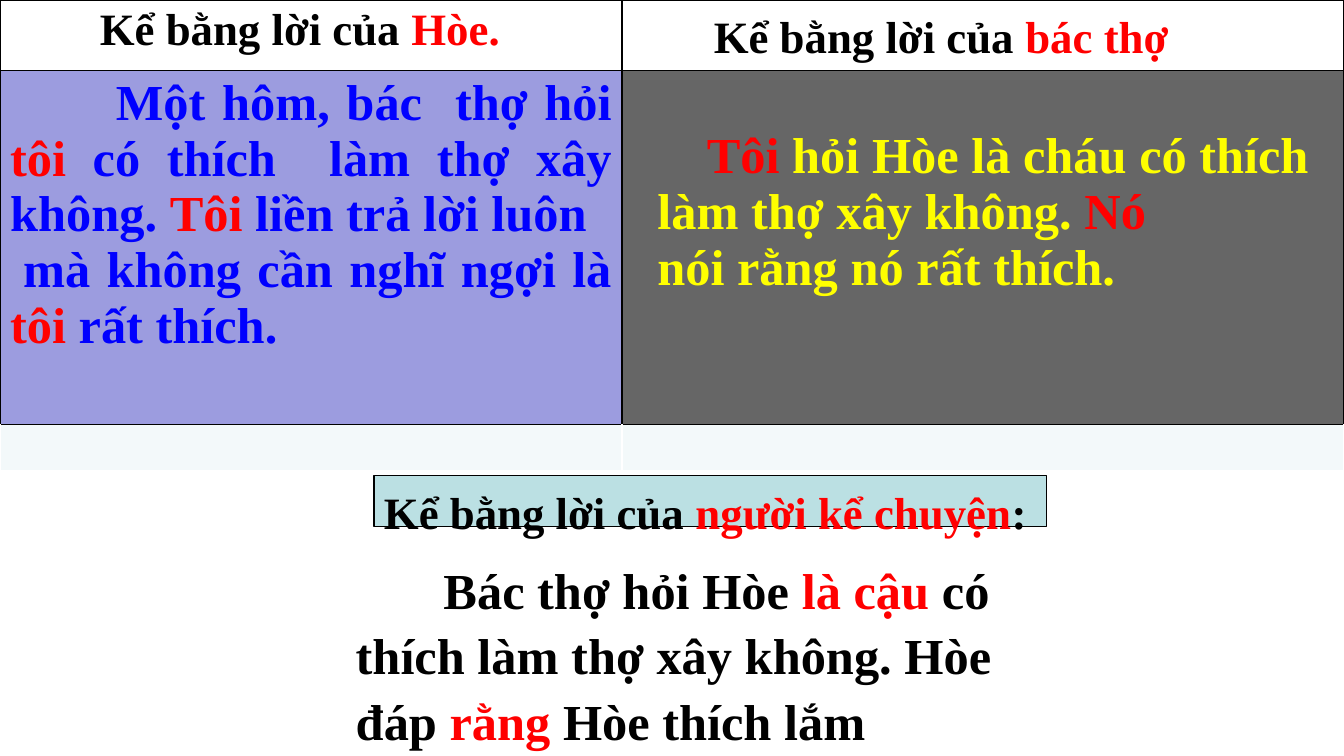
from lxml.etree import SubElement
from pptx import Presentation
from pptx.dml.color import RGBColor
from pptx.enum.shapes import MSO_SHAPE
from pptx.enum.text import MSO_ANCHOR, PP_ALIGN
from pptx.oxml.ns import qn
from pptx.util import Inches, Pt

COLORS = {
    "black": "000000", "white": "FFFFFF", "red": "FF0000", "blue": "0000FF",
    "yellow": "FFFF00", "lavender": "9C9CDF", "gray": "666666",
    "pale": "F3F9FA", "teal": "BBE0E3",
}
FONT = "Times New Roman"
HEADING_SIZE, BODY_SIZE = 32, 36
JUSTIFY, LEFT = PP_ALIGN.JUSTIFY, PP_ALIGN.LEFT

COLUMN_WIDTHS = [6.17, 7.16]
ROW_HEIGHTS = [0.7, 3.51, 0.46]

HOE_HEADING = [(0.89, [("Kể bằng lời của ", "black"), ("Hòe.", "red")])]
WORKER_HEADING = [(0.81, [("Kể bằng lời của ", "black"), ("bác thợ", "red")])]
HOE_STORY = [
    (1.05, [("Một hôm, bác  thợ hỏi ", "blue"), ("tôi ", "red"),
            ("có thích  làm thợ xây không. ", "blue"), ("Tôi ", "red"),
            ("liền trả lời luôn", "blue")]),
    (0.13, [("mà không cần nghĩ ngợi là ", "blue"), ("tôi ", "red"),
            ("rất thích.", "blue")]),
]
WORKER_STORY = [
    (0.49, [("Tôi ", "red"), ("hỏi Hòe là cháu có thích", "yellow")]),
    (0, [("làm thợ xây không. ", "yellow"), ("Nó", "red")]),
    (0, [("nói rằng nó rất thích.", "yellow")]),
]
NARRATOR_HEADING = [(0, [("Kể bằng lời của ", "black"),
                         ("người kể chuyện", "red"), (":", "black")])]
NARRATOR_STORY = [
    (0.87, [("Bác thợ hỏi Hòe ", "black"), ("là cậu ", "red"),
            ("có thích làm thợ xây không. Hòe đáp ", "black"),
            ("rằng ", "red"), ("Hòe thích lắm", "black")]),
]

CELLS = [
    [("white", HOE_HEADING, HEADING_SIZE, JUSTIFY, 0.1, 0.05),
     ("white", WORKER_HEADING, HEADING_SIZE, LEFT, 0.1, 0.13)],
    [("lavender", HOE_STORY, BODY_SIZE, JUSTIFY, 0.1, 0.05),
     ("gray", WORKER_STORY, BODY_SIZE, JUSTIFY, 0.35, 0.58)],
    [("pale", [], BODY_SIZE, LEFT, 0.1, 0.05)] * 2,
]


def color(name):
    return RGBColor.from_string(COLORS[name])


def write(frame, paragraphs, size, align, spacing=None):
    frame.word_wrap = True
    for index, (indent, runs) in enumerate(paragraphs):
        paragraph = frame.paragraphs[0] if index == 0 else frame.add_paragraph()
        paragraph.alignment = align
        paragraph.line_spacing = spacing
        paragraph.font.size = Pt(size)
        paragraph.font.name = FONT
        paragraph.font.bold = True
        properties = paragraph._p.get_or_add_pPr()
        properties.set("marL", "0")
        properties.set("indent", str(Inches(indent)))
        for text, name in runs:
            run = paragraph.add_run()
            run.text = text
            run.font.color.rgb = color(name)


def set_borders(cell, sides):
    properties = cell._tc.get_or_add_tcPr()
    for index, (side, name) in enumerate(sides.items()):
        line = SubElement(properties, qn(f"a:ln{side}"), w=str(Pt(1)))
        fill = SubElement(line, qn("a:solidFill"))
        SubElement(fill, qn("a:srgbClr"), val=COLORS[name])
        properties.remove(line)
        properties.insert(index, line)


def add_story_table(slide):
    table = slide.shapes.add_table(
        len(ROW_HEIGHTS), len(COLUMN_WIDTHS), 0, 0,
        Inches(sum(COLUMN_WIDTHS)), Inches(sum(ROW_HEIGHTS))).table
    table.first_row = table.horz_banding = False
    for column, width in zip(table.columns, COLUMN_WIDTHS):
        column.width = Inches(width)
    for row, height in zip(table.rows, ROW_HEIGHTS):
        row.height = Inches(height)
    for row_index, row in enumerate(CELLS):
        border = "white" if row_index == len(CELLS) - 1 else "black"
        sides = {"L": border, "R": border, "T": "black", "B": border}
        if row_index == len(CELLS) - 2:
            sides["B"] = "black"
        for column_index, (fill, text, size, align, left, top) in enumerate(row):
            cell = table.cell(row_index, column_index)
            cell.fill.solid()
            cell.fill.fore_color.rgb = color(fill)
            cell.margin_left = Inches(left)
            cell.margin_top = Inches(top)
            set_borders(cell, sides)
            write(cell.text_frame, text, size, align)


def add_narrator(slide):
    story = slide.shapes.add_textbox(
        Inches(3.43), Inches(5.45), Inches(7.09), Inches(1.92))
    write(story.text_frame, NARRATOR_STORY, BODY_SIZE, LEFT, 1.08)

    heading = slide.shapes.add_shape(
        MSO_SHAPE.RECTANGLE, Inches(3.71), Inches(4.72), Inches(6.67), Inches(0.5))
    heading.shadow.inherit = False
    heading.fill.solid()
    heading.fill.fore_color.rgb = color("teal")
    heading.line.color.rgb = color("black")
    heading.line.width = Pt(0.75)
    frame = heading.text_frame
    frame.vertical_anchor = MSO_ANCHOR.TOP
    frame.margin_top, frame.margin_bottom = Inches(0.09), 0
    write(frame, NARRATOR_HEADING, HEADING_SIZE, LEFT)


def main():
    presentation = Presentation()
    presentation.slide_width = Inches(13.33)
    presentation.slide_height = Inches(7.5)
    slide = presentation.slides.add_slide(presentation.slide_layouts[6])
    add_story_table(slide)
    add_narrator(slide)
    presentation.save("out.pptx")


if __name__ == "__main__":
    main()
